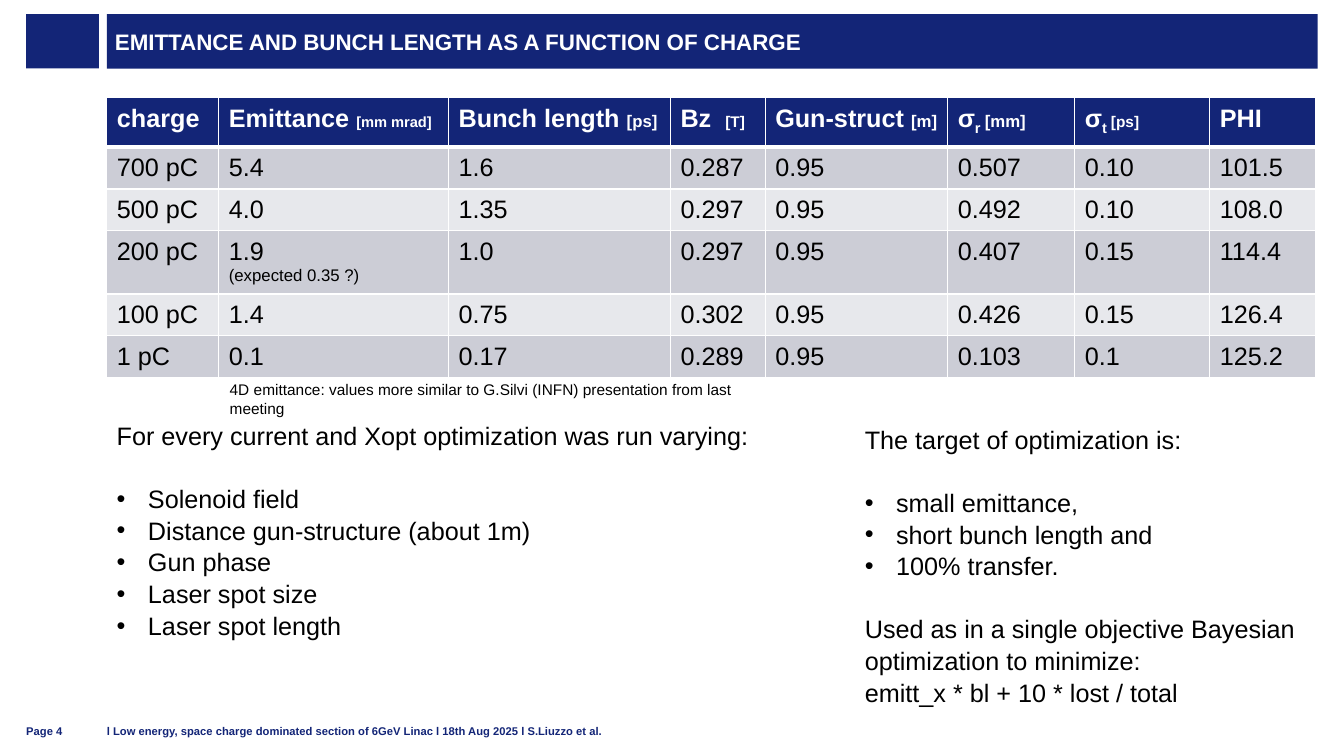
from pptx import Presentation
from pptx.dml.color import RGBColor
from pptx.enum.shapes import MSO_SHAPE
from pptx.enum.text import MSO_ANCHOR, PP_ALIGN
from pptx.oxml import parse_xml
from pptx.oxml.ns import nsdecls
from pptx.util import Inches, Pt

RECT = MSO_SHAPE.RECTANGLE
TOP, MIDDLE, BOTTOM = MSO_ANCHOR.TOP, MSO_ANCHOR.MIDDLE, MSO_ANCHOR.BOTTOM
LEFT = PP_ALIGN.LEFT
COLORS = {"navy": "132577", "white": "FFFFFF", "black": "000000",
          "dark": "CCCDD6", "light": "E7E8EC"}
WIDE, HIGH = 13.33, 7.5
EDGE, MAIN, SPAN = 0.26, 1.06, 12.01
PAD = 0.1
LINE = 1.05

COLS = [1.11, 2.28, 2.2, 0.94, 1.81, 1.26, 1.34, 1.05]
HEADS = [("charge", "", "", 18), ("Emittance", "", "[mm mrad]", 10.5),
         ("Bunch length", "", "[ps]", 12), ("Bz ", "", "[T]", 11),
         ("Gun-struct", "", "[m]", 12), ("σ", "r ", "[mm]", 12),
         ("σ", "t ", "[ps]", 11), ("PHI", "", "", 18)]
ROWS = [
    ["700 pC", "5.4", "1.6", "0.287", "0.95", "0.507", "0.10", "101.5"],
    ["500 pC", "4.0", "1.35", "0.297", "0.95", "0.492", "0.10", "108.0"],
    ["200 pC", "1.9\n(expected 0.35 ?)", "1.0", "0.297", "0.95", "0.407", "0.15", "114.4"],
    ["100 pC", "1.4", "0.75", "0.302", "0.95", "0.426", "0.15", "126.4"],
    ["1 pC", "0.1", "0.17", "0.289", "0.95", "0.103", "0.1", "125.2"],
]
VARIED = [("For every current and Xopt optimization was run varying:", False, 0),
          ("Solenoid field", True, 22),
          ("Distance gun-structure (about 1m)", True, 0),
          ("Gun phase", True, 0),
          ("Laser spot size", True, 0),
          ("Laser spot length", True, 0)]
TARGET = [("The target of optimization is:", False, 0),
          ("small emittance,", True, 22),
          ("short bunch length and", True, 0),
          ("100% transfer.", True, 0),
          ("Used as in a single objective Bayesian optimization to minimize:", False, 22),
          ("emitt_x * bl + 10 * lost / total", False, 0)]


def paint(fill, color):
    """Give a fill one of the named colours."""
    fill.solid()
    fill.fore_color.rgb = RGBColor.from_string(COLORS[color])


def style(font, size, color="black", bold=False):
    """Set the face, size, colour and weight of a font."""
    font.name, font.size, font.bold = "Arial", Pt(size), bold
    font.color.rgb = RGBColor.from_string(COLORS[color])


def inset(frame, side, edge):
    """Set the inner margins of a text frame."""
    frame.margin_left = frame.margin_right = Inches(side)
    frame.margin_top = frame.margin_bottom = Inches(edge)


def place(shape, box):
    """Move a shape to a box of left, top, width and height."""
    shape.left, shape.top, shape.width, shape.height = map(Inches, box)


def add_text(slide, box, side=PAD, edge=PAD / 2, anchor=TOP):
    """Add an empty wrapping text box and return its frame."""
    frame = slide.shapes.add_textbox(*map(Inches, box)).text_frame
    frame.word_wrap = True
    frame.vertical_anchor = anchor
    inset(frame, side, edge)
    return frame


def add_band(slide, box, gap=0.08):
    """Build the header band: a small block, then the title."""
    left, top, width, height = box
    block = MAIN - EDGE - gap
    mark = slide.shapes.add_shape(RECT, *map(Inches, (left, top, block, height)))
    mark.shadow.inherit = False
    paint(mark.fill, "navy")
    mark.line.fill.background()
    title = slide.shapes.title
    place(title, (left + block + gap, top, width - block - gap, height))
    paint(title.fill, "navy")
    frame = title.text_frame
    frame.text = "EMITTANCE AND BUNCH LENGTH AS A FUNCTION OF CHARGE"
    frame.vertical_anchor = MIDDLE
    frame.word_wrap = True
    inset(frame, 0.08, 0)
    frame.paragraphs[0].alignment = LEFT
    style(frame.paragraphs[0].runs[0].font, 16, "white", True)


def add_edges(cell, base):
    """Draw white borders round a cell, with its own bottom width."""
    props = cell._tc.get_or_add_tcPr()
    for side, width in (("L", 1), ("R", 1), ("T", 1), ("B", base)):
        props.append(parse_xml(
            f'<a:ln{side} {nsdecls("a")} w="{Pt(width)}"><a:solidFill>'
            f'<a:srgbClr val="{COLORS["white"]}"/></a:solidFill></a:ln{side}>'))


def fill_head(cell, head):
    """Write a column name with its subscript and unit."""
    name, sub, unit, small = head
    par = cell.text_frame.paragraphs[0]
    par.line_spacing = LINE
    lead = name + " " if unit and not sub else name
    for text, size, base in ((lead, 18, 0), (sub, 18, -25000), (unit, small, 0)):
        if text:
            run = par.add_run()
            run.text = text
            style(run.font, size, "white", True)
            if base:
                run._r.get_or_add_rPr().set("baseline", str(base))


def add_grid(slide, box):
    """Build the table of results."""
    table = slide.shapes.add_table(len(ROWS) + 1, len(COLS), *map(Inches, box)).table
    for col, width in zip(table.columns, COLS):
        col.width = Inches(width)
    for num, row in enumerate(table.rows):
        row.height = Inches(0.41 if num else 0.49)
        for pos, cell in enumerate(row.cells):
            add_edges(cell, 1 if num else 3)
            if num == 0:
                paint(cell.fill, "navy")
                fill_head(cell, HEADS[pos])
                continue
            paint(cell.fill, "dark" if num % 2 else "light")
            cell.text_frame.text = ROWS[num - 1][pos]
            for step, par in enumerate(cell.text_frame.paragraphs):
                par.line_spacing = LINE
                style(par.runs[0].font, 12 if step else 18)


def add_list(slide, box, items):
    """Build a text block of plain and bulleted lines."""
    frame = add_text(slide, box)
    frame.text = "\n".join(text for text, dot, gap in items)
    for par, (text, dot, gap) in zip(frame.paragraphs, items):
        par.line_spacing = LINE
        if gap:
            par.space_before = Pt(gap)
        if dot:
            props = par._p.get_or_add_pPr()
            props.set("marL", str(Inches(0.31)))
            props.set("indent", str(-Inches(0.31)))
            props.append(parse_xml(f'<a:buFont {nsdecls("a")} typeface="Arial"/>'))
            props.append(parse_xml(f'<a:buChar {nsdecls("a")} char="•"/>'))
        style(par.runs[0].font, 18)


def add_note(slide, box):
    """Write the small remark under the table."""
    frame = add_text(slide, box)
    frame.text = "4D emittance: values more similar to G.Silvi (INFN) presentation from last meeting"
    frame.paragraphs[0].line_spacing = LINE
    style(frame.paragraphs[0].runs[0].font, 11)


def add_foot(slide, box):
    """Write the page number and the footer line."""
    left, top, width, height = box
    line = "l Low energy, space charge dominated section of 6GeV Linac l 18th Aug 2025 l S.Liuzzo et al."
    for text, start, span in (("Page 4", left, 0.6), (line, MAIN, width - MAIN + left)):
        frame = add_text(slide, (start, top, span, height), 0, 0, BOTTOM)
        frame.text = text
        style(frame.paragraphs[0].runs[0].font, 8, "navy", True)


def main():
    """Build the slide and save it."""
    deck = Presentation()
    deck.slide_width, deck.slide_height = Inches(WIDE), Inches(HIGH)
    slide = deck.slides.add_slide(deck.slide_layouts[5])
    add_band(slide, (EDGE, 0.14, MAIN + SPAN - EDGE, 0.54))
    add_foot(slide, (EDGE, 7.09, 9.7, 0.23))
    add_list(slide, (MAIN, 4.11, 6.47, 2.52), VARIED)
    add_list(slide, (8.48, 4.15, 4.7, 2.83), TARGET)
    add_grid(slide, (MAIN, 0.97, SPAN, 2.54))
    add_note(slide, (2.18, 3.71, 5.6, 0.29))
    deck.save("out.pptx")


if __name__ == "__main__":
    main()
